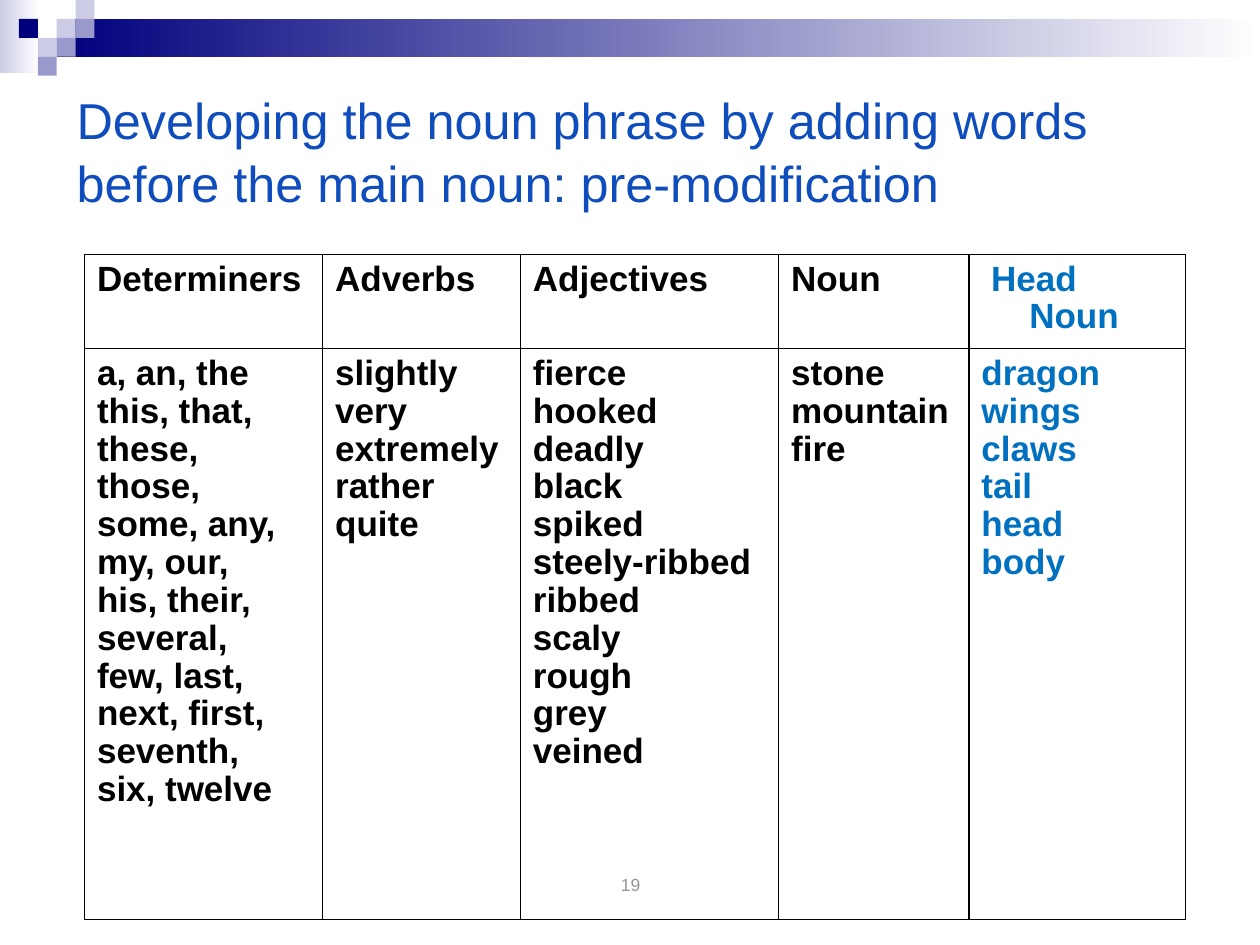
from lxml import etree
from pptx import Presentation
from pptx.dml.color import RGBColor
from pptx.enum.shapes import MSO_SHAPE
from pptx.enum.text import MSO_ANCHOR, PP_ALIGN
from pptx.oxml.ns import qn
from pptx.util import Inches, Pt

RECTANGLE = MSO_SHAPE.RECTANGLE
MIDDLE, BOTTOM = MSO_ANCHOR.MIDDLE, MSO_ANCHOR.BOTTOM
LEFT, CENTER = PP_ALIGN.LEFT, PP_ALIGN.CENTER

WHITE = RGBColor(0xFF, 0xFF, 0xFF)
BLACK = RGBColor(0, 0, 0)
NAVY = RGBColor(0x00, 0x00, 0x7D)
LAVENDER = RGBColor(0xCC, 0xCC, 0xE6)
PERIWINKLE = RGBColor(0x99, 0x99, 0xCC)
TITLE_BLUE = RGBColor(0x0F, 0x4D, 0xBC)
HEAD_BLUE = RGBColor(0x00, 0x70, 0xC0)
GREY = RGBColor(0x96, 0x96, 0x96)

FONT = "Arial"
HANGING = Inches(0.38)
SQUARE = 0.15

# Heading, column width, text colour, words
WORD_CLASSES = [
    ("Determiners", 1.89, BLACK,
     ["a, an, the", "this, that,", "these,", "those,", "some, any,", "my, our,",
      "his, their,", "several,", "few, last,", "next, first,", "seventh,",
      "six, twelve"]),
    ("Adverbs", 1.57, BLACK,
     ["slightly", "very", "extremely", "rather", "quite"]),
    ("Adjectives", 2.05, BLACK,
     ["fierce", "hooked", "deadly", "black", "spiked", "steely-ribbed", "ribbed",
      "scaly", "rough", "grey", "veined"]),
    ("Noun", 1.51, BLACK, ["stone", "mountain", "fire"]),
    (" Head Noun", 1.72, HEAD_BLUE,
     ["dragon", "wings", "claws", "tail", "head", "body"]),
]
ROW_HEIGHTS = (0.72, 4.53)


def style_font(font, size, color, bold=False):
    font.name = FONT
    font.size = Pt(size)
    font.color.rgb = color
    font.bold = bold


def add_block(slide, left, top, width, height, color, fade=False):
    """Add a borderless rectangle, fading to white on the right if asked."""
    block = slide.shapes.add_shape(
        RECTANGLE, Inches(left), Inches(top), Inches(width), Inches(height))
    block.shadow.inherit = False
    block.line.fill.background()
    if fade:
        block.fill.gradient()
        block.fill.gradient_angle = 0
        for stop, stop_color in zip(block.fill.gradient_stops, (color, WHITE)):
            stop.color.rgb = stop_color
    else:
        block.fill.solid()
        block.fill.fore_color.rgb = color


def add_banner(slide, left, top, width):
    add_block(slide, left, top, 0.31, 0.58, LAVENDER, fade=True)
    add_block(slide, left + 3 * SQUARE, top + SQUARE, width - 3 * SQUARE,
              2 * SQUARE, NAVY, fade=True)
    mosaic = [(3, 1, LAVENDER), (4, 0, LAVENDER), (4, 1, PERIWINKLE),
              (2, 2, LAVENDER), (1, 1, NAVY), (3, 2, PERIWINKLE),
              (2, 3, PERIWINKLE)]
    for column, row, color in mosaic:
        add_block(slide, left + column * SQUARE, top + row * SQUARE,
                  SQUARE, SQUARE, color)


def add_label(slide, left, top, width, height, text, size, color, anchor, align):
    label = slide.shapes.add_textbox(
        Inches(left), Inches(top), Inches(width), Inches(height))
    frame = label.text_frame
    frame.word_wrap = True
    frame.vertical_anchor = anchor
    frame.text = text
    paragraph = frame.paragraphs[0]
    paragraph.alignment = align
    style_font(paragraph.runs[0].font, size, color)
    return frame


def add_borders(cell):
    properties = cell._tc.get_or_add_tcPr()
    for side in ("a:lnL", "a:lnR", "a:lnT", "a:lnB"):
        line = etree.SubElement(properties, qn(side), w=str(Pt(1)))
        fill = etree.SubElement(line, qn("a:solidFill"))
        etree.SubElement(fill, qn("a:srgbClr"), val=str(BLACK))


def fill_cell(cell, lines, color):
    add_borders(cell)
    cell.fill.background()
    cell.text_frame.text = "\n".join(lines)
    for paragraph in cell.text_frame.paragraphs:
        paragraph.line_spacing = 0.97
        properties = paragraph._p.get_or_add_pPr()
        properties.set("marL", str(HANGING))
        properties.set("indent", str(-HANGING))
        style_font(paragraph.runs[0].font, 20, color, bold=True)


def add_word_table(slide, left, top):
    total_width = sum(width for _, width, _, _ in WORD_CLASSES)
    table = slide.shapes.add_table(
        len(ROW_HEIGHTS), len(WORD_CLASSES), Inches(left), Inches(top),
        Inches(total_width), Inches(sum(ROW_HEIGHTS))).table
    table.first_row = False
    table.horz_banding = False
    for row, height in zip(table.rows, ROW_HEIGHTS):
        row.height = Inches(height)
    for index, (heading, width, color, words) in enumerate(WORD_CLASSES):
        table.columns[index].width = Inches(width)
        fill_cell(table.cell(0, index), [heading], color)
        fill_cell(table.cell(1, index), words, color)


def main():
    prs = Presentation()
    prs.slide_width, prs.slide_height = Inches(10), Inches(7.5)
    slide = prs.slides.add_slide(prs.slide_layouts[6])

    add_banner(slide, 0, 0, 10)
    page_number = add_label(slide, 3.42, 6.83, 3.17, 0.5, "19", 10, GREY,
                            BOTTOM, CENTER)
    page_number.margin_bottom = Inches(0.23)
    title = add_label(
        slide, 0.51, 0.44, 9, 1.5,
        "Developing the noun phrase by adding words before the main noun: "
        "pre-modification", 28.8, TITLE_BLUE, MIDDLE, LEFT)
    title.paragraphs[0].line_spacing = 1.03
    add_word_table(slide, 0.67, 2.02)

    prs.save("out.pptx")


if __name__ == "__main__":
    main()
